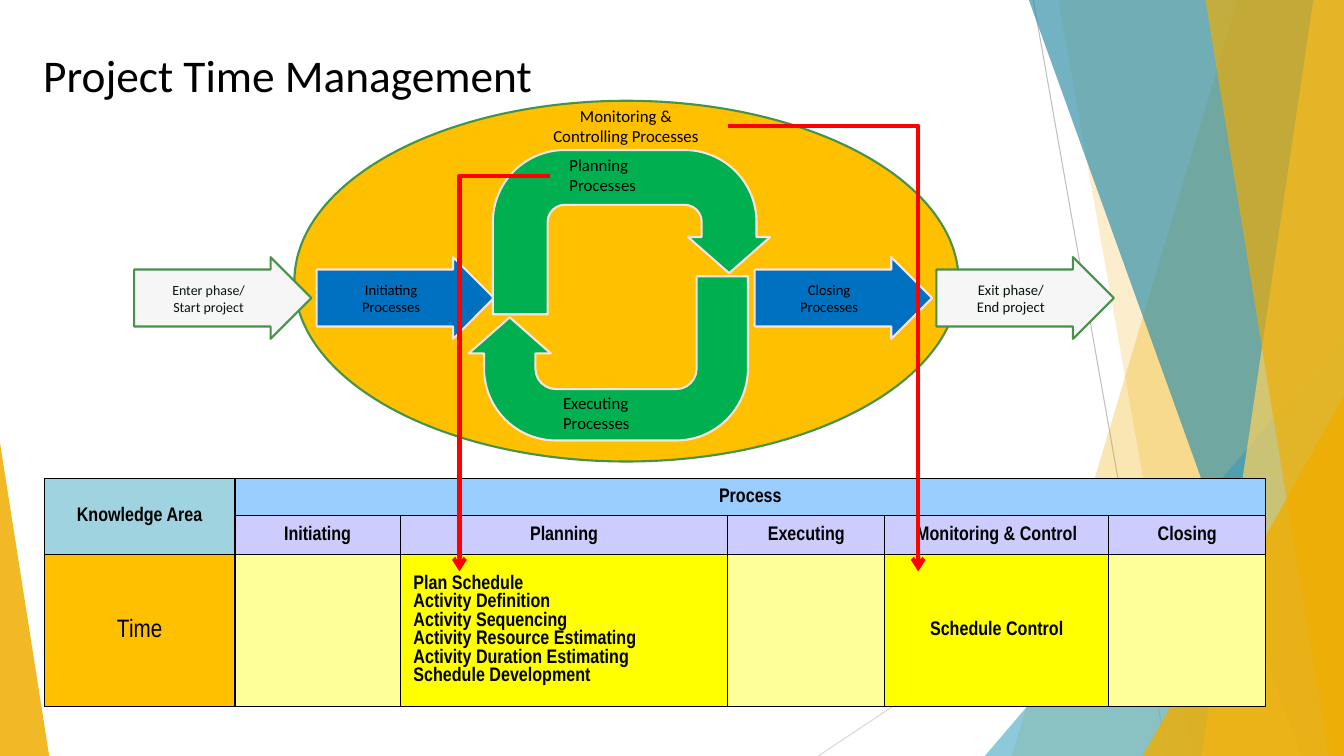
from lxml.etree import SubElement
from pptx import Presentation
from pptx.dml.color import RGBColor
from pptx.enum.shapes import MSO_CONNECTOR, MSO_SHAPE
from pptx.enum.text import MSO_ANCHOR, PP_ALIGN
from pptx.oxml import parse_xml
from pptx.oxml.ns import nsdecls, qn
from pptx.util import Cm, Pt

BLACK = RGBColor(0x00, 0x00, 0x00)
DARK_GREEN = RGBColor(0x09, 0x14, 0x0A)
OUTLINE_GREEN = RGBColor(0x47, 0x92, 0x49)
GREEN = RGBColor(0x00, 0xB0, 0x50)
BLUE = RGBColor(0x00, 0x70, 0xC0)
ROSE = RGBColor(0xFA, 0xE2, 0xE5)
PALE_GRAY = RGBColor(0xF6, 0xF6, 0xF7)
ORANGE = RGBColor(0xFF, 0xC0, 0x00)
RED = RGBColor(0xFF, 0x00, 0x00)
GOLD = RGBColor(0xF0, 0xAD, 0x00)
LIGHT_GOLD = RGBColor(0xFF, 0xD2, 0x5D)
TEAL = RGBColor(0x37, 0x92, 0xAA)
LIGHT_TEAL = RGBColor(0x60, 0xB5, 0xCC)
PALE_TEAL = RGBColor(0xA0, 0xD3, 0xE0)
SKY = RGBColor(0x99, 0xCC, 0xFF)
LAVENDER = RGBColor(0xCC, 0xCC, 0xFF)
PALE_YELLOW = RGBColor(0xFF, 0xFF, 0x99)
YELLOW = RGBColor(0xFF, 0xFF, 0x00)
GRAY = RGBColor(0xBF, 0xBF, 0xBF)
LIGHT_GRAY = RGBColor(0xD9, 0xD9, 0xD9)
WIDTH, HEIGHT = 33.87, 19.05


def write_text(frame, text, size=12, font="Calibri", color=BLACK, bold=False,
               align=PP_ALIGN.LEFT):
    frame.word_wrap = True
    for index, line in enumerate(text.split("\n")):
        para = frame.add_paragraph() if index else frame.paragraphs[0]
        para.alignment = align
        span = para.add_run()
        span.text = line
        span.font.size = Pt(size)
        span.font.name = font
        span.font.bold = bold
        span.font.color.rgb = color


class SlideBuilder:
    body_font = "Calibri"
    table_font = "Arial Narrow"
    outline_width = 1.5

    def __init__(self, page):
        self.page = page

    def paint(self, shape, fill, outline=None, opacity=100):
        shape.shadow.inherit = False
        shape.fill.solid()
        shape.fill.fore_color.rgb = fill
        if opacity < 100:
            color = shape._element.spPr.find(qn("a:solidFill"))[0]
            SubElement(color, qn("a:alpha")).set("val", str(opacity * 1000))
        if outline is None:
            shape.line.fill.background()
        else:
            shape.line.color.rgb = outline
            shape.line.width = Pt(self.outline_width)

    def shape(self, kind, place, fill, outline=None, adjust=(), opacity=100, rotation=0):
        shape = self.page.shapes.add_shape(kind, *map(Cm, place))
        for index, value in enumerate(adjust):
            shape.adjustments[index] = value
        shape.rotation = rotation
        self.paint(shape, fill, outline, opacity)
        return shape

    def ribbon(self, top_left, bottom_left, fill, opacity):
        outline = self.page.shapes.build_freeform(Cm(top_left), 0)
        corners = [(WIDTH, 0), (WIDTH, HEIGHT), (bottom_left, HEIGHT)]
        outline.add_line_segments([(Cm(x), Cm(y)) for x, y in corners])
        self.paint(outline.convert_to_shape(), fill, opacity=opacity)

    def line(self, start, end, color, width, kind=MSO_CONNECTOR.STRAIGHT):
        line = self.page.shapes.add_connector(kind, *map(Cm, start + end))
        line.line.color.rgb = color
        line.line.width = Pt(width)
        SubElement(line._element.spPr, qn("a:effectLst"))
        return line

    def bent_arrow(self, start, end):
        arrow = self.line(start, end, RED, 3, MSO_CONNECTOR.ELBOW)
        properties = arrow._element.spPr
        properties.find(qn("a:prstGeom")).set("prst", "bentConnector2")
        SubElement(properties.find(qn("a:ln")), qn("a:tailEnd")).set("type", "arrow")

    def text(self, place, text, **style):
        box = self.page.shapes.add_textbox(*map(Cm, place))
        write_text(box.text_frame, text, font=self.body_font, **style)

    def process_arrow(self, left, text, fill, outline, color, size=10.5):
        arrow = self.shape(MSO_SHAPE.RIGHT_ARROW, (left, 6.48, 4.47, 2.06), fill,
                           outline, (0.697, 0.5))
        arrow.text_frame.vertical_anchor = MSO_ANCHOR.MIDDLE
        write_text(arrow.text_frame, text, size=size, font=self.body_font,
                   color=color, align=PP_ALIGN.CENTER)

    def cell(self, cell, fill, text="", **style):
        cell.fill.solid()
        cell.fill.fore_color.rgb = fill
        cell.vertical_anchor = MSO_ANCHOR.MIDDLE
        cell.margin_left = cell.margin_right = Cm(0.33)
        cell.margin_top = cell.margin_bottom = Cm(0.13)
        for index, side in enumerate(("lnL", "lnR", "lnT", "lnB")):
            border = parse_xml(
                f'<a:{side} {nsdecls("a")} w="12700"><a:solidFill>'
                f'<a:srgbClr val="{BLACK}"/></a:solidFill></a:{side}>')
            cell._tc.get_or_add_tcPr().insert(index, border)
        if text:
            options = {"size": 14, "bold": True, "align": PP_ALIGN.CENTER, **style}
            write_text(cell.text_frame, text, font=self.table_font, **options)

    def table(self, place, widths, heights, rows):
        table = self.page.shapes.add_table(
            len(heights), len(widths), *map(Cm, place)).table
        table.first_row = table.horz_banding = False
        for column, width in zip(table.columns, widths):
            column.width = Cm(width)
        for row, height in zip(table.rows, heights):
            row.height = Cm(height)
        for row, values in zip(table.rows, rows):
            for cell, (fill, text, style) in zip(row.cells, values):
                self.cell(cell, fill, text, **style)
        return table


def draw_background(builder):
    builder.line((26.04, 0), (29.41, HEIGHT), GRAY, 0.75)
    builder.line((WIDTH, 10.24), (20.62, HEIGHT), LIGHT_GRAY, 0.75)
    triangle = MSO_SHAPE.ISOSCELES_TRIANGLE
    builder.ribbon(31.19, 25.5, GOLD, 30)
    builder.ribbon(26.67, 30.05, GOLD, 20)
    builder.shape(triangle, (24.82, 8.46, 9.05, 10.59), LIGHT_TEAL, adjust=[1], opacity=72)
    builder.ribbon(25.93, 32.79, TEAL, 70)
    builder.ribbon(33.1, 30.28, LIGHT_GOLD, 70)
    builder.ribbon(30.38, 33.48, GOLD, 65)
    builder.shape(triangle, (28.8, 9.98, 5.07, 9.07), GOLD, adjust=[1], opacity=80)
    builder.shape(triangle, (0, 11.15, 1.24, 7.9), GOLD, adjust=[0], opacity=85)


def draw_process_table(builder):
    phases = ["Initiating", "Planning", "Executing", "Monitoring & Control", "Closing"]
    activities = "\n".join([
        "Plan Schedule", "Activity Definition", "Activity Sequencing",
        "Activity Resource Estimating", "Activity Duration Estimating",
        "Schedule Development"])
    empty = (PALE_YELLOW, "", {})
    rows = [
        [(PALE_TEAL, "Knowledge Area", {}), (SKY, "Process", {})] + [(SKY, "", {})] * 4,
        [(PALE_TEAL, "", {})] + [(LAVENDER, phase, {}) for phase in phases],
        [(ORANGE, "Time", {"size": 18, "bold": False}), empty,
         (YELLOW, activities, {"align": PP_ALIGN.LEFT}), empty,
         (YELLOW, "Schedule Control", {}), empty],
    ]
    table = builder.table((1.12, 12.06, 30.76, 5.36),
                          [4.8, 4.17, 8.25, 3.96, 5.64, 3.96], [0.93, 0.99, 3.45], rows)
    table.cell(0, 0).merge(table.cell(1, 0))
    table.cell(0, 1).merge(table.cell(0, 5))


def draw_process_cycle(builder):
    builder.shape(MSO_SHAPE.OVAL, (7.42, 2.54, 16.74, 9.09), ORANGE, OUTLINE_GREEN)
    outer = (PALE_GRAY, OUTLINE_GREEN, DARK_GREEN)
    inner = (BLUE, ROSE, BLACK)
    builder.process_arrow(3.38, "Enter phase/\nStart project", *outer, size=10)
    builder.process_arrow(23.6, "Exit phase/\nEnd project", *outer)
    builder.process_arrow(7.98, "Initiating\nProcesses", *inner)
    builder.process_arrow(19.02, "Closing\nProcesses", *inner)
    bend = (0.25, 0.22, 0.438, 0.75)
    builder.shape(MSO_SHAPE.U_TURN_ARROW, (12.42, 3.78, 6.99, 4.14), GREEN, ROSE,
                  (0.334, *bend))
    builder.shape(MSO_SHAPE.U_TURN_ARROW, (11.81, 6.96, 7.04, 4.14), GREEN, ROSE,
                  (0.313, *bend), rotation=180)
    builder.text((14.1, 3.78, 3.63, 1.27), "Planning\nProcesses")
    builder.text((13.94, 9.78, 3.63, 1.27), "Executing\nProcesses")
    builder.text((12.42, 2.54, 6.71, 1.27), "Monitoring &\nControlling Processes",
                 align=PP_ALIGN.CENTER)
    builder.bent_arrow((13.87, 4.43), (11.58, 14.4))
    builder.bent_arrow((18.34, 3.17), (23.14, 14.4))


def main():
    deck = Presentation()
    deck.slide_width, deck.slide_height = Cm(WIDTH), Cm(HEIGHT)
    builder = SlideBuilder(deck.slides.add_slide(deck.slide_layouts[6]))
    draw_background(builder)
    builder.text((0.84, 1.07, 28.22, 1.27), "Project Time Management", size=32.4)
    draw_process_table(builder)
    draw_process_cycle(builder)
    deck.save("out.pptx")


if __name__ == "__main__":
    main()
